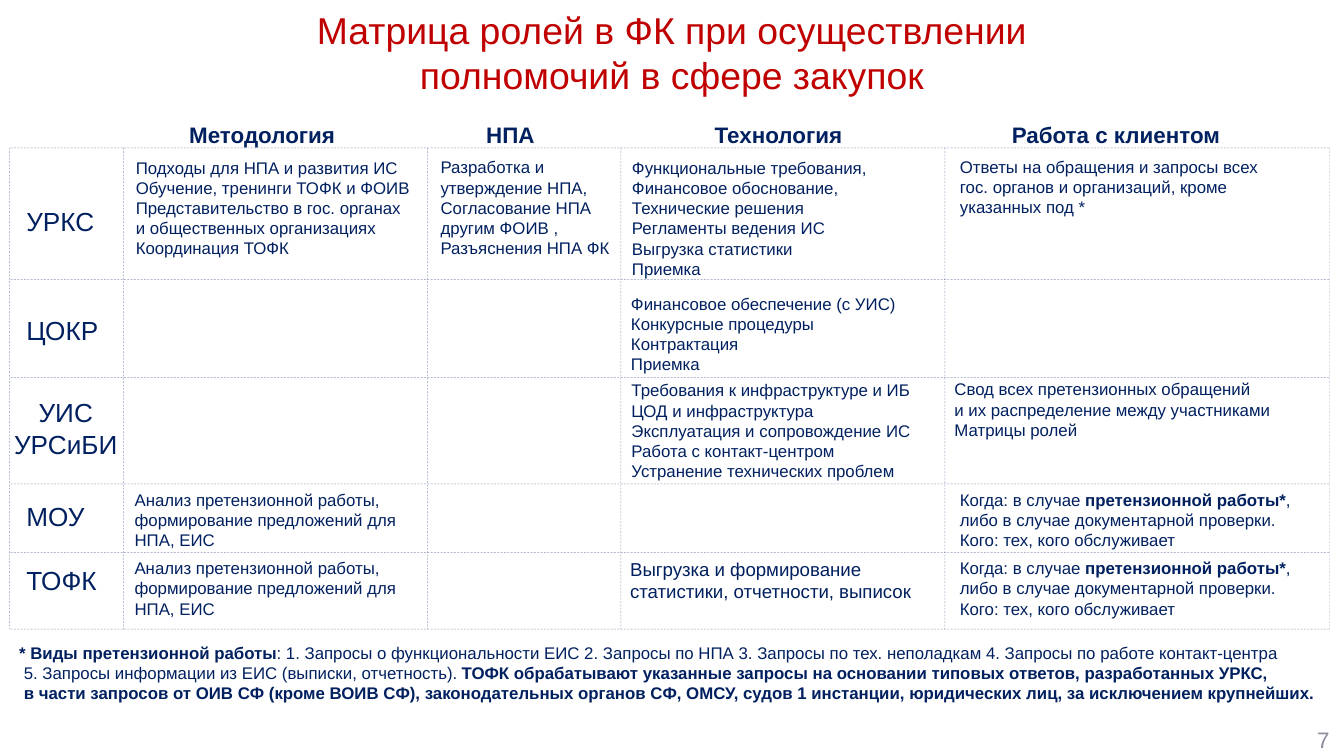
"""Build the slide with the matrix of roles in procurement."""
from lxml.etree import SubElement
from pptx import Presentation
from pptx.dml.color import RGBColor
from pptx.enum.dml import MSO_LINE
from pptx.enum.shapes import MSO_CONNECTOR, MSO_SHAPE
from pptx.enum.text import MSO_ANCHOR, PP_ALIGN
from pptx.oxml.ns import qn
from pptx.util import Pt

NAVY = RGBColor(0x00, 0x20, 0x60)
RED = RGBColor(0xC0, 0x00, 0x00)
GREY = RGBColor(0x8C, 0x8D, 0x9D)
LEFT, CENTER, RIGHT = PP_ALIGN.LEFT, PP_ALIGN.CENTER, PP_ALIGN.RIGHT

TITLE = "Матрица ролей в ФК при осуществлении\nполномочий в сфере закупок"
HEADERS = [
    ("Методология", 94.3, 93.6, LEFT),
    ("НПА", 253.4, 40.3, LEFT),
    ("Технология", 375.8, 87.1, LEFT),
    ("Работа с клиентом", 534.2, 127.4, CENTER),
]
ROLES = [
    (["УРКС"], 10.8, 109.4, 72, LEFT),
    (["ЦОКР"], 10.8, 167.8, 72, LEFT),
    (["УИС", "УРСиБИ"], 2.9, 211.7, 61.9, CENTER),
    (["МОУ"], 10.8, 267.8, 72, LEFT),
    (["ТОФК"], 10.8, 301.7, 72, LEFT),
]
ANALYSIS = ["Анализ претензионной работы, формирование предложений для НПА, ЕИС"]
CLAIMS = ["Когда: в случае |претензионной работы*|, либо в случае документарной "
          "проверки.\nКого: тех, кого обслуживает"]
METHOD, ACTS, TECH, CLIENT = range(4)
CELL_X = [68.4, 231.8, 334.1, 510.5]
CELL_Y = [82.8, 156.2, 202.3, 261.4, 298.1]
CELLS = [
    (0, METHOD, 153.4, 63.4, 9, [
        "Подходы для НПА и развития ИС",
        "Обучение, тренинги ТОФК и ФОИВ",
        "Представительство в гос. органах и общественных организациях",
        "Координация ТОФК"]),
    (0, ACTS, 102.2, 56.9, 9, [
        "Разработка и утверждение НПА,",
        "Согласование НПА другим ФОИВ ,",
        "Разъяснения НПА ФК"]),
    (0, TECH, 146.9, 69.1, 9, [
        "Функциональные требования,",
        "Финансовое обоснование,",
        "Технические решения",
        "Регламенты ведения ИС",
        "Выгрузка статистики",
        "Приемка"]),
    (0, CLIENT, 180, 38.9, 9, [
        "Ответы на обращения и запросы всех гос. органов и организаций, "
        "кроме указанных под *"]),
    (1, TECH, 162.7, 46.1, 9, [
        "Финансовое обеспечение (с УИС)",
        "Конкурсные процедуры",
        "Контрактация",
        "Приемка"]),
    (2, TECH, 185, 56.9, 9, [
        "Требования к инфраструктуре и ИБ",
        "ЦОД и инфраструктура",
        "Эксплуатация и сопровождение ИС",
        "Работа с контакт-центром",
        "Устранение технических проблем"]),
    (2, CLIENT, 184.3, 35.3, 9, [
        "Свод всех претензионных обращений\n"
        "и их распределение между участниками Матрицы ролей"]),
    (3, METHOD, 162, 35.3, 9, ANALYSIS),
    (3, CLIENT, 187.9, 35.3, 9, CLAIMS),
    (4, METHOD, 160.6, 36, 9, ANALYSIS),
    (4, TECH, 168.5, 27.4, 10, [
        "Выгрузка и формирование статистики, отчетности, выписок"]),
    (4, CLIENT, 187.9, 35.3, 9, CLAIMS),
]
FOOTNOTE = [
    "|* Виды претензионной работы|: 1. Запросы о функциональности ЕИС "
    "2. Запросы по НПА 3. Запросы по тех. неполадкам "
    "4. Запросы по работе контакт-центра\n"
    " 5. Запросы информации из ЕИС (выписки, отчетность). "
    "|ТОФК обрабатывают указанные запросы на основании типовых ответов, "
    "разработанных УРКС,\n"
    " в части запросов от ОИВ СФ (кроме ВОИВ СФ), законодательных органов СФ, "
    "ОМСУ, судов 1 инстанции, юридических лиц, за исключением крупнейших."]
COLUMN_LINES = [5, 66.2, 229, 332.6, 506.2, 712.1]
ROW_LINES = [79.2, 149.8, 202.3, 259.2, 295.9, 337]


def write(tf, paragraphs, size, color=NAVY, align=LEFT):
    """Fill a text frame; bars switch bold on and off."""
    for i, text in enumerate(paragraphs):
        p = tf.add_paragraph() if i else tf.paragraphs[0]
        p.alignment = align
        p.font.name, p.font.size = "Arial", Pt(size)
        p.font.color.rgb = color
        for j, part in enumerate(text.split("|")):
            for k, line in enumerate(part.split("\n")):
                if k:
                    p.add_line_break()
                if line:
                    r = p.add_run()
                    r.text = line
                    r.font.bold = j % 2 == 1


def add_label(s, box, text, size, color=NAVY, align=LEFT, wrap=True,
              anchor=MSO_ANCHOR.MIDDLE):
    """Add a plain text box."""
    tf = s.shapes.add_textbox(*map(Pt, box)).text_frame
    tf.word_wrap = wrap
    tf.vertical_anchor = anchor
    write(tf, [text], size, color, align)


def add_panel(s, box, paragraphs, size, align=LEFT, inset=2.9):
    """Add a clear rounded rectangle with text."""
    sp = s.shapes.add_shape(MSO_SHAPE.ROUNDED_RECTANGLE, *map(Pt, box))
    sp.adjustments[0] = 0.08
    sp.shadow.inherit = False
    sp.fill.background()
    sp.line.fill.background()
    tf = sp.text_frame
    tf.word_wrap = True
    tf.vertical_anchor = MSO_ANCHOR.TOP
    tf.margin_left = Pt(inset)
    tf.margin_top = tf.margin_right = tf.margin_bottom = 0
    write(tf, paragraphs, size, align=align)


def add_rule(s, *ends):
    """Add a thin translucent dashed line."""
    line = s.shapes.add_connector(MSO_CONNECTOR.STRAIGHT, *map(Pt, ends))
    line.line.width = Pt(0.25)
    line.line.color.rgb = NAVY
    line.line.dash_style = MSO_LINE.DASH
    props = line._element.spPr
    color = next(props.iter(qn("a:srgbClr")))
    SubElement(color, qn("a:alpha"), val="45000")
    SubElement(props, qn("a:effectLst"))


def main():
    """Draw the matrix and save it."""
    prs = Presentation()
    prs.slide_width, prs.slide_height = Pt(720), Pt(405)
    s = prs.slides.add_slide(prs.slide_layouts[6])
    add_label(s, (119.5, 15.1, 481, 25.2), TITLE, 20, RED, CENTER)
    for text, x, w, align in HEADERS:
        add_label(s, (x, 61.2, w, 21.6), f"|{text}|", 12, align=align,
                  wrap=False, anchor=MSO_ANCHOR.TOP)
    for x in COLUMN_LINES:
        add_rule(s, x, ROW_LINES[0], x, ROW_LINES[-1])
    for y in ROW_LINES:
        add_rule(s, COLUMN_LINES[-1], y, COLUMN_LINES[0], y)
    for names, x, y, w, align in ROLES:
        add_panel(s, (x, y, w, 19.5 * len(names)), names, 14, align)
    for row, column, w, h, size, paragraphs in CELLS:
        inset = 0 if (row, column) == (2, CLIENT) else 2.9
        add_panel(s, (CELL_X[column], CELL_Y[row], w, h), paragraphs, size, inset=inset)
    add_panel(s, (6.5, 343.4, 707, 38.2), FOOTNOTE, 9)
    add_label(s, (697.7, 388.1, 21.6, 16.6), "7", 12, GREY, RIGHT)
    prs.save("out.pptx")


if __name__ == "__main__":
    main()
